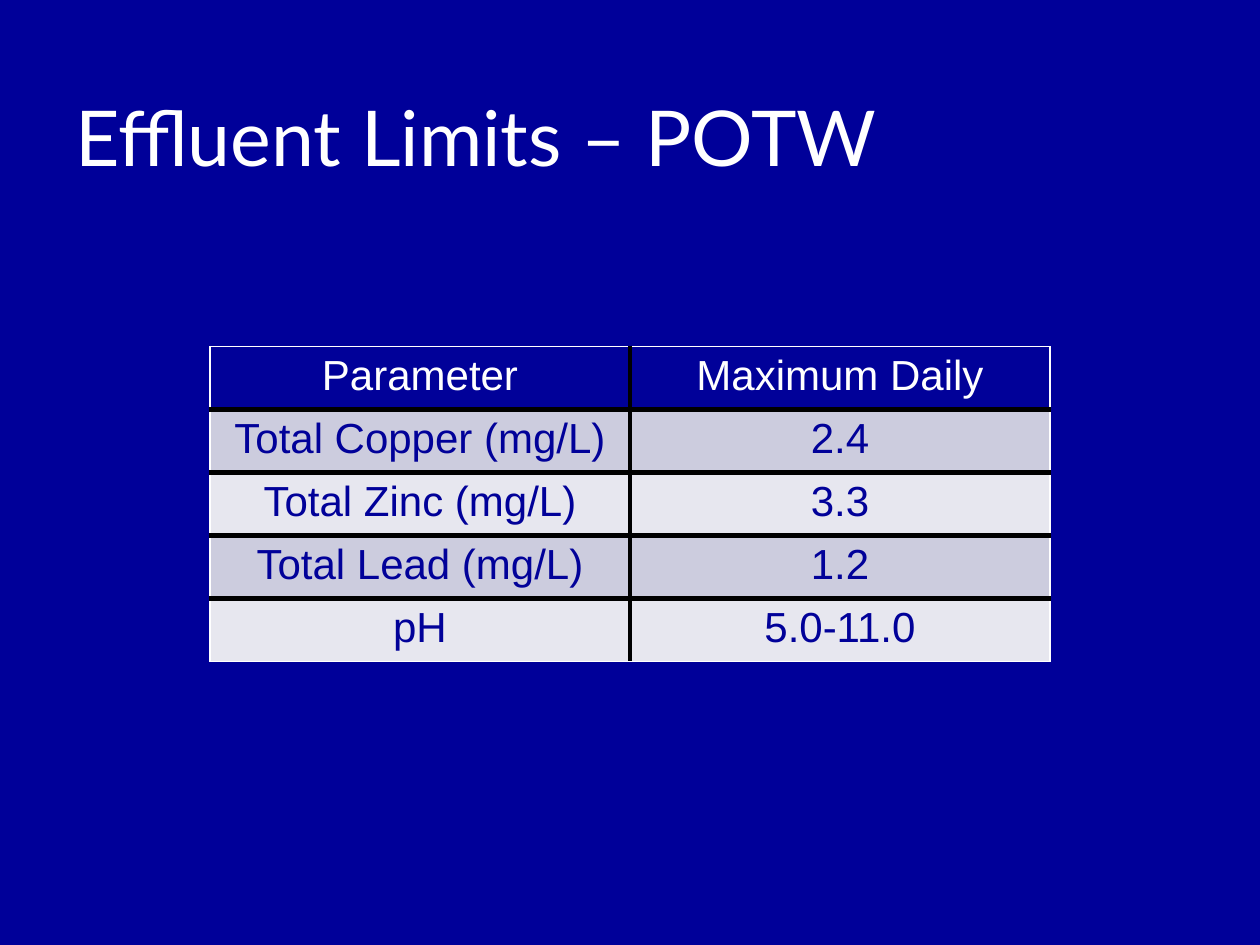
from lxml import etree
from pptx import Presentation
from pptx import util as u
from pptx.dml.color import RGBColor
from pptx.enum import text
from pptx.oxml.ns import qn

TITLE = "Effluent Limits – POTW"
LIMITS = [
    ("Parameter", "Maximum Daily"),
    ("Total Copper (mg/L)", "2.4"),
    ("Total Zinc (mg/L)", "3.3"),
    ("Total Lead (mg/L)", "1.2"),
    ("pH", "5.0-11.0"),
]

BACKGROUND = RGBColor(0x00, 0x00, 0x99)
NAVY = RGBColor(0x01, 0x01, 0x99)
BANDS = RGBColor(0xCC, 0xCC, 0xDE), RGBColor(0xE7, 0xE7, 0xEF)
WHITE = RGBColor(0xFF, 0xFF, 0xFF)
BLACK = RGBColor(0x00, 0x00, 0x00)
OUTER_EDGE = WHITE, 1
INNER_EDGE = BLACK, 3

SLIDE_W, SLIDE_H = u.Inches(10), u.Inches(7.5)
TABLE_W = SLIDE_W * 2 // 3
ROW_H = u.Inches(0.41)


def style(paragraph, font_name, size, color):
    for run in paragraph.runs:
        run.font.name = font_name
        run.font.size = u.Pt(size)
        run.font.color.rgb = color


def add_border(cell, side, color, width):
    line = etree.SubElement(cell._tc.get_or_add_tcPr(), qn(f"a:{side}"),
                            w=str(u.Pt(width)))
    fill = etree.SubElement(line, qn("a:solidFill"))
    etree.SubElement(fill, qn("a:srgbClr"), val=str(color))


def add_title(slide):
    box = slide.shapes.add_textbox(SLIDE_W // 20, u.Inches(0.32),
                                   SLIDE_W * 9 // 10, u.Inches(1.51))
    frame = box.text_frame
    frame.word_wrap = True
    frame.vertical_anchor = text.MSO_ANCHOR.MIDDLE
    frame.text = TITLE
    style(frame.paragraphs[0], "Lato", 44, WHITE)


def add_limits(slide):
    rows, cols = len(LIMITS), len(LIMITS[0])
    table = slide.shapes.add_table(rows, cols, (SLIDE_W - TABLE_W) // 2, u.Inches(2.75),
                                   TABLE_W, ROW_H * rows).table
    for r, values in enumerate(LIMITS):
        table.rows[r].height = ROW_H
        for c, value in enumerate(values):
            cell = table.cell(r, c)
            cell.text = value
            paragraph = cell.text_frame.paragraphs[0]
            paragraph.alignment = text.PP_ALIGN.CENTER
            style(paragraph, "Arial", 24, NAVY if r else WHITE)

            on_outside = {"lnL": c == 0, "lnR": c == cols - 1,
                          "lnT": r == 0, "lnB": r == rows - 1}
            for side, outside in on_outside.items():
                add_border(cell, side, *(OUTER_EDGE if outside else INNER_EDGE))
            cell.fill.solid()
            cell.fill.fore_color.rgb = BANDS[(r - 1) % 2] if r else NAVY


def main():
    deck = Presentation()
    deck.slide_width, deck.slide_height = SLIDE_W, SLIDE_H
    slide = deck.slides.add_slide(deck.slide_layouts[6])
    slide.background.fill.solid()
    slide.background.fill.fore_color.rgb = BACKGROUND
    add_title(slide)
    add_limits(slide)
    deck.save("out.pptx")


if __name__ == "__main__":
    main()
